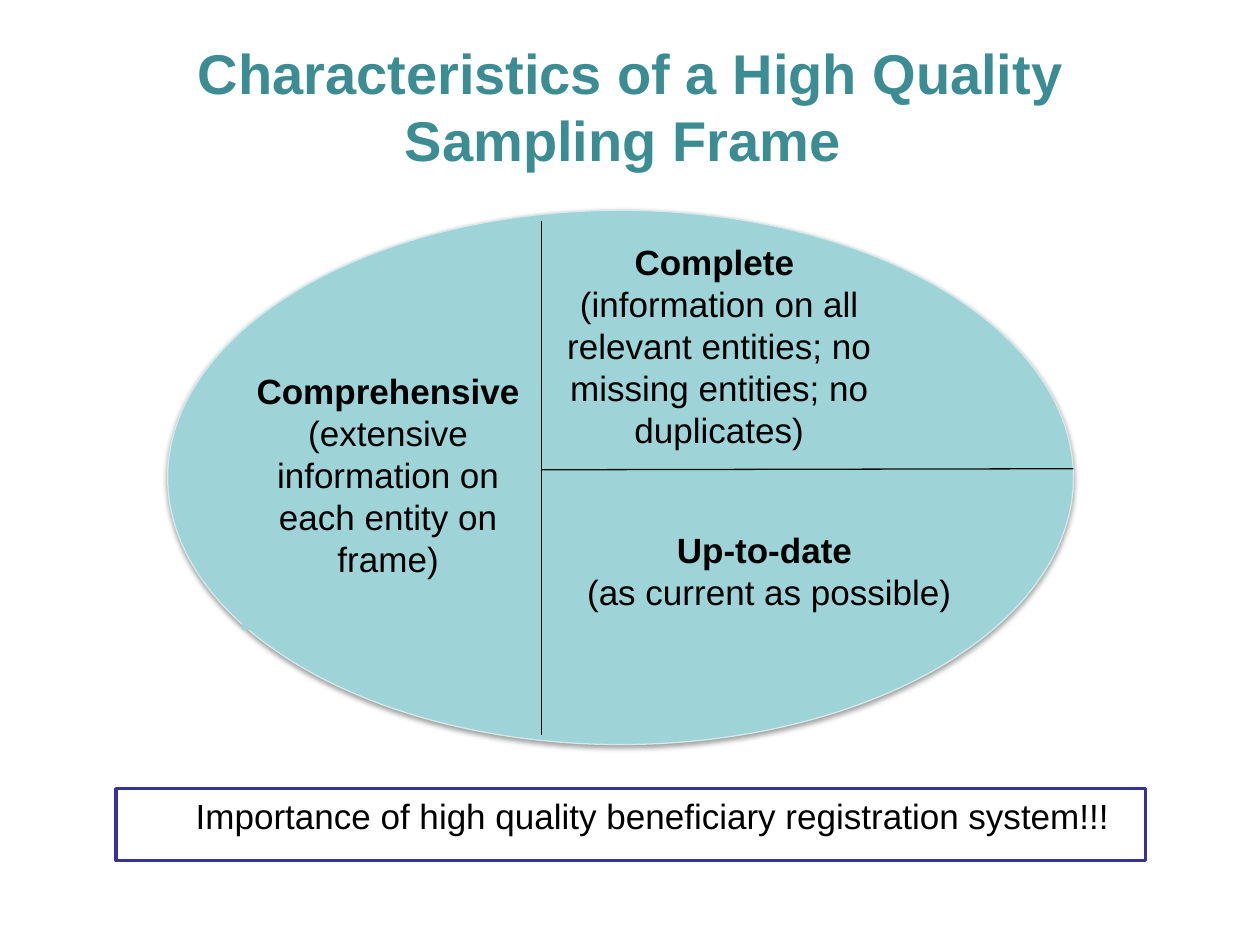
from dataclasses import dataclass

from lxml import etree
from pptx import Presentation
from pptx.dml.color import RGBColor
from pptx.enum.shapes import MSO_CONNECTOR as Connector, MSO_SHAPE as Shape
from pptx.enum.text import MSO_ANCHOR as Anchor, PP_ALIGN as Align
from pptx.oxml import parse_xml
from pptx.oxml.ns import nsdecls, qn
from pptx.util import Cm, Pt


@dataclass(frozen=True)
class Theme:
    font: str = "Arial"
    title: str = "3C8C93"
    text: str = "000000"
    panel: str = "9ED3D7"
    panel_edge: str = "D5E8EA"
    divider: str = "0D0D0D"
    paper: str = "FFFFFF"
    frame: str = "333399"
    title_size: int = 32
    body_size: int = 20


theme = Theme()


def write_text(shape, *parts, size=theme.body_size, color=theme.text, anchor=Anchor.TOP, space=0):
    frame = shape.text_frame
    frame.word_wrap = True
    frame.vertical_anchor = anchor
    paragraph = frame.paragraphs[0]
    paragraph.alignment = Align.CENTER
    paragraph.space_before = Pt(space)
    for text, bold in parts:
        if text == "\n":
            paragraph.add_line_break()
            continue
        run = paragraph.add_run()
        run.text = text
        run.font.name = theme.font
        run.font.size = Pt(size)
        run.font.bold = bold
        run.font.color.rgb = RGBColor.from_string(color)
    return paragraph


def add_filled(shapes, kind, box, fill, edge=None, width=0.75):
    shape = shapes.add_shape(kind, *map(Cm, box))
    shape.shadow.inherit = False
    shape.fill.solid()
    shape.fill.fore_color.rgb = RGBColor.from_string(fill)
    if edge:
        shape.line.color.rgb = RGBColor.from_string(edge)
        shape.line.width = Pt(width)
    else:
        shape.line.fill.background()
    return shape


presentation = Presentation()
presentation.slide_width = Cm(25.4)
presentation.slide_height = Cm(19.05)
slide = presentation.slides.add_slide(presentation.slide_layouts[5])

title = slide.shapes.title
title.left, title.top, title.width, title.height = map(Cm, (2.49, 0.64, 20.45, 2.97))
title_frame = title.text_frame
title_frame.margin_left = title_frame.margin_right = Cm(0.1)
title_frame.margin_top = title_frame.margin_bottom = Cm(0.1)
write_text(title, ("Characteristics of a High Quality Sampling Frame ", True),
           size=theme.title_size, color=theme.title, anchor=Anchor.MIDDLE)

diagram = slide.shapes.add_group_shape()
ellipse = add_filled(diagram.shapes, Shape.OVAL, (3.38, 4.24, 18.26, 10.77),
                     theme.panel, theme.panel_edge)
effects = ellipse._element.spPr.find(qn("a:effectLst"))
effects.append(parse_xml(
    f'<a:outerShdw {nsdecls("a")} blurRad="39400" dist="20300" dir="5400000" rotWithShape="0">'
    '<a:srgbClr val="000000"><a:alpha val="38000"/></a:srgbClr></a:outerShdw>'))

comprehensive = add_filled(diagram.shapes, Shape.RECTANGLE, (4.88, 7.32, 5.89, 5.38), theme.panel)
write_text(comprehensive, ("Comprehensive", True),
           (" (extensive information on each entity on frame)", False))

dividers = [
    ((10.92, 4.45, 10.92, 14.81), theme.text),
    ((21.64, 9.45, 10.92, 9.47), theme.divider),
]
for ends, color in dividers:
    divider = diagram.shapes.add_connector(Connector.STRAIGHT, *map(Cm, ends))
    divider.line.color.rgb = RGBColor.from_string(color)
    divider.line.width = Pt(0.75)
    etree.SubElement(divider._element.spPr, qn("a:effectLst"))

qualities = [
    ("Complete ", "(information on all relevant entities; no missing entities; no duplicates)",
     (10.59, 4.72, 7.82, 4.52)),
    ("Up-to-date ", "(as current as possible)", (11, 10.52, 9.02, 1.96)),
]
for heading, detail, box in qualities:
    quality = slide.shapes.add_textbox(*map(Cm, box))
    write_text(quality, (heading, True), ("\n", False), (detail, False), space=6)

banner = add_filled(slide.shapes, Shape.RECTANGLE, (2.34, 15.9, 20.75, 1.45),
                    theme.paper, theme.frame, 2)
message = write_text(banner, ("Importance of high quality beneficiary registration system!!!", False),
                     space=6)
message.level = 1
properties = message._p.get_or_add_pPr()
properties.set("marL", str(Cm(0.66)))
properties.set("indent", str(Cm(0.23)))

presentation.save("out.pptx")
